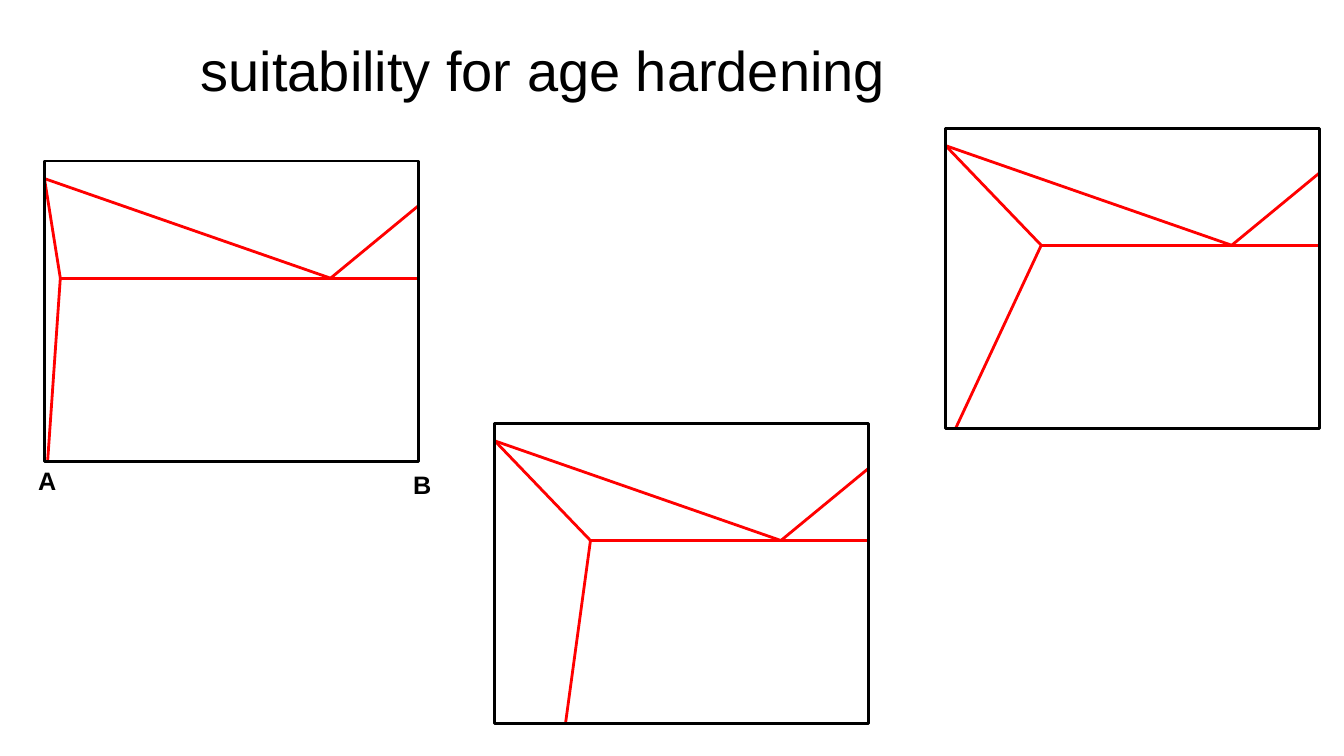
from lxml import etree
from pptx import Presentation
from pptx.dml.color import RGBColor
from pptx.enum import shapes, text
from pptx.oxml.ns import qn
from pptx.util import Cm, Pt

COLORS = {"ink": "000000", "phase": "FF0000"}
BOX_W, BOX_H = 9.42, 7.57
LIQUID_A, LIQUID_B = 0.44, 1.13  # depths where the liquidus meets each side
EUTECTIC = (7.21, 2.95)


def rgb(name):
    return RGBColor.from_string(COLORS[name])


def add_text(s, wording, x, y, w, h, size, bold=False, align=text.PP_ALIGN.LEFT):
    tf = s.shapes.add_textbox(Cm(x), Cm(y), Cm(w), Cm(h)).text_frame
    tf.word_wrap = True
    p = tf.paragraphs[0]
    p.text = wording
    p.alignment = align
    p.font.name = "Arial"
    p.font.size = Pt(size)
    p.font.bold = bold
    p.font.color.rgb = rgb("ink")


def add_line(s, start, end):
    line = s.shapes.add_connector(
        shapes.MSO_CONNECTOR.STRAIGHT, *(Cm(v) for v in (*start, *end)))
    line.line.color.rgb = rgb("phase")
    line.line.width = Pt(2)
    etree.SubElement(line._element.spPr, qn("a:effectLst"))


def add_phase_diagram(s, x, y, solubility, solvus_foot):
    """Draw a eutectic diagram; the last two lengths run from its left side."""
    def at(dx, dy):
        return x + dx, y + dy

    corner = at(solubility, EUTECTIC[1])
    eutectic = at(*EUTECTIC)
    melt_a = at(0, LIQUID_A)
    for start, end in (
        (corner, at(solvus_foot, BOX_H)),
        (corner, melt_a),
        (melt_a, eutectic),
        (eutectic, at(BOX_W, LIQUID_B)),
        (corner, at(BOX_W, EUTECTIC[1])),
    ):
        add_line(s, start, end)

    frame = s.shapes.add_shape(
        shapes.MSO_SHAPE.RECTANGLE, Cm(x), Cm(y), Cm(BOX_W), Cm(BOX_H))
    frame.fill.background()
    frame.line.color.rgb = rgb("ink")
    frame.line.width = Pt(2)
    frame.shadow.inherit = False


def add_component_labels(s, x, y):
    """Name the two pure components below a diagram at x, y."""
    for name, dx, dy in (("A", -0.41, 7.54), ("B", 9.04, 7.65)):
        add_text(s, name, x + dx, y + dy, 1.24, 1.02, 18, bold=True)


def main():
    prs = Presentation()
    prs.slide_width, prs.slide_height = Cm(33.87), Cm(19.05)
    s = prs.slides.add_slide(prs.slide_layouts[6])
    add_text(s, "suitability for age hardening", 3.99, 0.76, 19.38, 1.96, 40,
             align=text.PP_ALIGN.CENTER)
    add_phase_diagram(s, 12.47, 10.67, solubility=2.41, solvus_foot=1.78)
    add_phase_diagram(s, 23.83, 3.23, solubility=2.41, solvus_foot=0.25)
    add_phase_diagram(s, 1.12, 4.06, solubility=0.4, solvus_foot=0.08)
    add_component_labels(s, 1.12, 4.06)
    prs.save("out.pptx")


if __name__ == "__main__":
    main()
